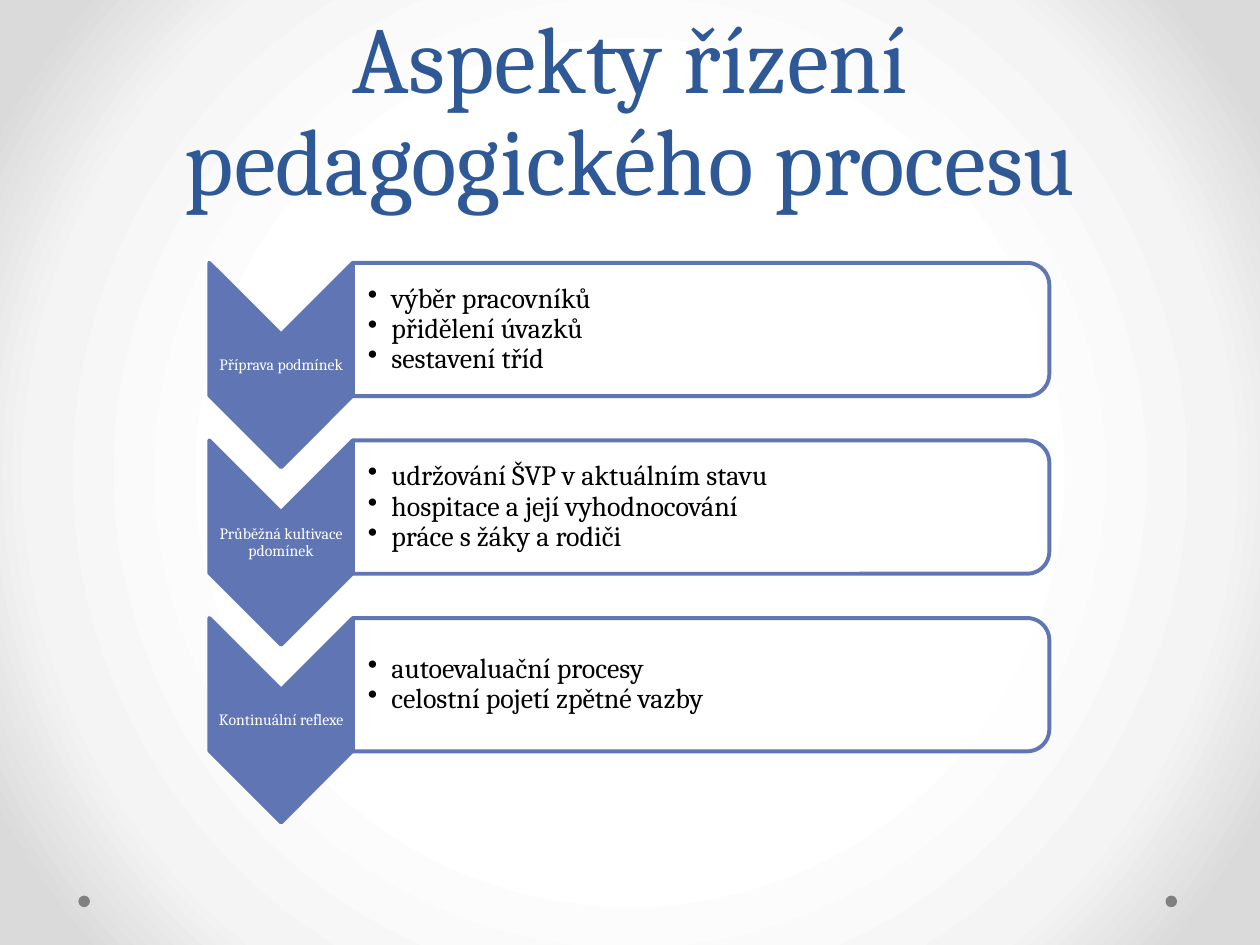
from pptx import Presentation
from pptx.dml.color import RGBColor
from pptx.enum.shapes import MSO_SHAPE
from pptx.enum.text import MSO_ANCHOR, MSO_AUTO_SIZE, PP_ALIGN
from pptx.oxml import parse_xml
from pptx.oxml.ns import nsdecls
from pptx.util import Pt
from lxml.etree import SubElement
from pptx.oxml.ns import qn

FONT = "Cambria"
TITLE_BLUE = RGBColor(0x2F, 0x58, 0x97)
ACCENT = RGBColor(0x60, 0x76, 0xB4)
GRAY = RGBColor(0x80, 0x80, 0x80)
WHITE = RGBColor(0xFF, 0xFF, 0xFF)
BLACK = RGBColor(0x00, 0x00, 0x00)
BACKGROUND_STOPS = [(50, "FFFFFF"), (76, "F4F4F4"), (92, "DADADA")]

STAGES = [
    ("Příprava podmínek",
     ["výběr pracovníků", "přidělení úvazků", "sestavení tříd"]),
    ("Průběžná kultivace pdomínek",
     ["udržování ŠVP v aktuálním stavu", "hospitace a její vyhodnocování",
      "práce s žáky a rodiči"]),
    ("Kontinuální reflexe",
     ["autoevaluační procesy", "celostní pojetí zpětné vazby"]),
]


def set_background(slide):
    stops = "".join(
        f'<a:gs pos="{position * 1000}"><a:srgbClr val="{color}"/></a:gs>'
        for position, color in BACKGROUND_STOPS)
    background = parse_xml(
        f'<p:bg {nsdecls("p", "a")}><p:bgPr><a:gradFill rotWithShape="1">'
        f'<a:gsLst>{stops}</a:gsLst><a:path path="circle">'
        '<a:fillToRect l="50000" t="50000" r="50000" b="50000"/></a:path>'
        '</a:gradFill><a:effectLst/></p:bgPr></p:bg>')
    slide.element.cSld.insert(0, background)


def format_paragraph(paragraph, size, color, alignment, line_spacing):
    paragraph.alignment = alignment
    paragraph.line_spacing = line_spacing
    for run in paragraph.runs:
        run.font.name = FONT
        run.font.size = Pt(size)
        run.font.color.rgb = color


def add_filled_shape(slide, kind, left, top, width, height, color):
    shape = slide.shapes.add_shape(kind, Pt(left), Pt(top), Pt(width), Pt(height))
    shape.shadow.inherit = False
    shape.fill.solid()
    shape.fill.fore_color.rgb = color
    shape.line.fill.background()
    return shape


def add_turned_shape(slide, kind, left, top, width, height, color):
    """Turn a shape by 90 degrees so that it covers the given box."""
    shape = add_filled_shape(slide, kind, left + (width - height) / 2,
                             top + (height - width) / 2, height, width, color)
    shape.rotation = 90
    shape.line.color.rgb = ACCENT
    shape.line.width = Pt(2.25)
    return shape


def add_text(slide, left, top, width, height, lines, size, color, alignment,
             left_inset=0.7):
    box = slide.shapes.add_textbox(Pt(left), Pt(top), Pt(width), Pt(height))
    frame = box.text_frame
    frame.word_wrap = True
    frame.vertical_anchor = MSO_ANCHOR.MIDDLE
    frame.margin_left = Pt(left_inset)
    frame.margin_top = frame.margin_right = frame.margin_bottom = Pt(0.7)
    frame.text = "\n".join(lines)
    for paragraph in frame.paragraphs:
        format_paragraph(paragraph, size, color, alignment, 0.9)
    return frame


def add_bullet(paragraph, indent):
    properties = paragraph._p.get_or_add_pPr()
    properties.set("marL", str(Pt(indent)))
    properties.set("indent", str(Pt(-indent)))
    SubElement(properties, qn("a:buChar"), char="•")


def add_title(slide, left, top, width, height):
    title = slide.shapes.title
    title.left, title.top, title.width, title.height = map(
        Pt, (left, top, width, height))
    frame = title.text_frame
    frame.text = "Aspekty řízení pedagogického procesu"
    frame.auto_size = MSO_AUTO_SIZE.NONE
    frame.vertical_anchor = MSO_ANCHOR.BOTTOM
    format_paragraph(frame.paragraphs[0], 54, TITLE_BLUE, PP_ALIGN.CENTER, Pt(58))


def add_stage(slide, left, top, width, height, name, points):
    arrow_width, panel_height = 82, 76.2
    panel_left, panel_width = left + arrow_width, width - arrow_width

    # Downward arrow with its label between the notch and the tip
    add_turned_shape(slide, MSO_SHAPE.CHEVRON, left, top, arrow_width, height, ACCENT)
    add_text(slide, left, top + arrow_width / 2, arrow_width, height - arrow_width,
             [name], 9, WHITE, PP_ALIGN.CENTER)

    # Panel with rounded right corners and its bullet list
    panel = add_turned_shape(slide, MSO_SHAPE.ROUND_2_SAME_RECTANGLE,
                             panel_left, top, panel_width, panel_height, WHITE)
    color = panel.fill._xPr.find(qn("a:solidFill"))[0]
    SubElement(color, qn("a:alpha"), val="90000")
    frame = add_text(slide, panel_left, top + 4, panel_width - 4, panel_height - 8,
                     points, 16, BLACK, PP_ALIGN.LEFT, left_inset=8.6)
    for paragraph in frame.paragraphs:
        add_bullet(paragraph, 13.5)


def add_process(slide, left, top, width, height):
    arrow_height = 116.8
    pitch = (height - arrow_height) / (len(STAGES) - 1)
    for index, (name, points) in enumerate(STAGES):
        add_stage(slide, left, top + index * pitch, width, arrow_height, name, points)


def add_corner_dots(slide, left, top, width, size):
    for dot_left in (left, left + width - size):
        add_filled_shape(slide, MSO_SHAPE.OVAL, dot_left, top, size, size, GRAY)


def main():
    presentation = Presentation()
    presentation.slide_width, presentation.slide_height = Pt(720), Pt(540)
    slide = presentation.slides.add_slide(presentation.slide_layouts[5])
    set_background(slide)
    add_corner_dots(slide, 44.8, 511.8, 627.8, 6.6)
    add_title(slide, 36, 0, 648, 126)
    add_process(slide, 119.6, 150.2, 480, 319.8)
    presentation.save("out.pptx")


if __name__ == "__main__":
    main()
